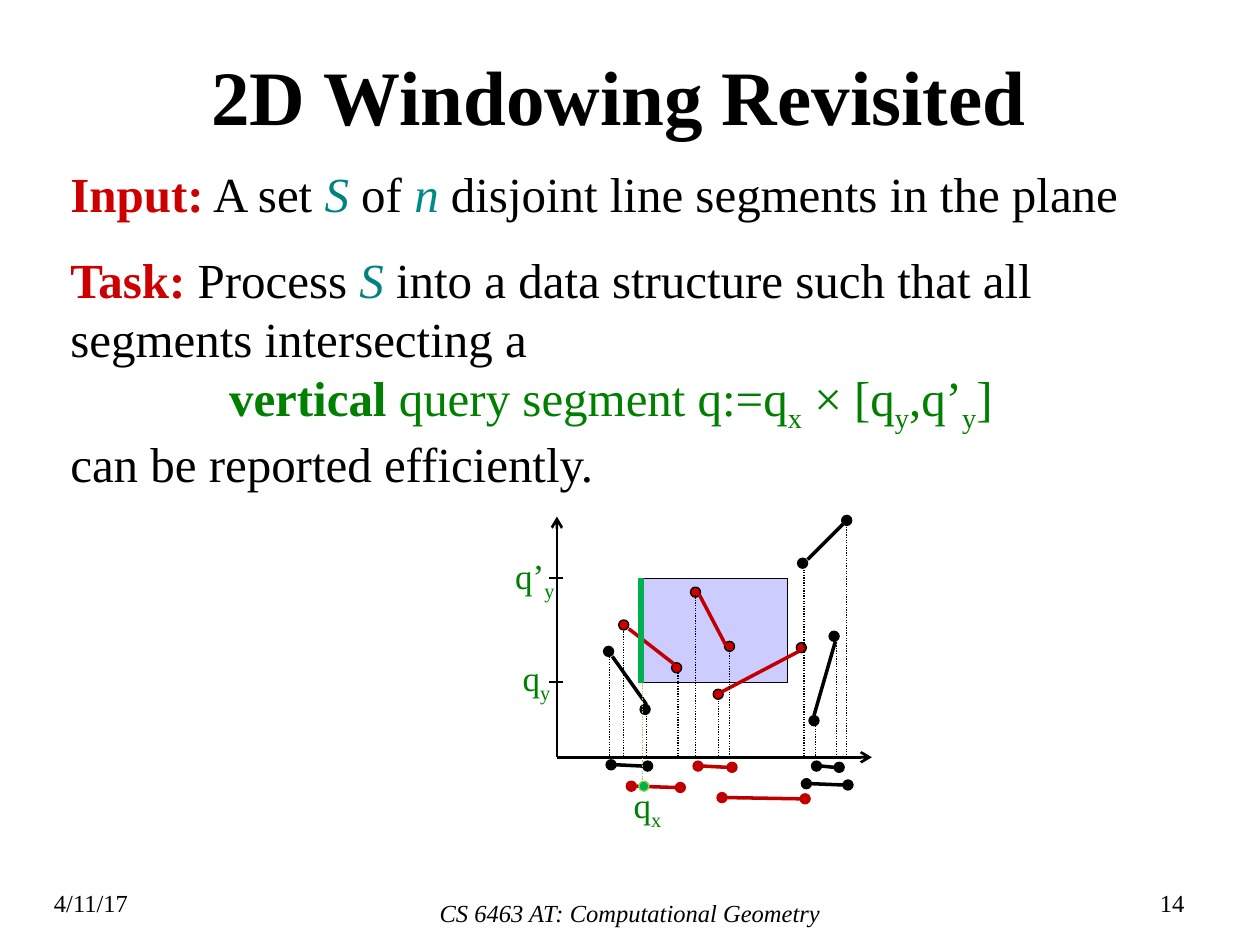
from lxml import etree
from pptx import Presentation
from pptx.dml.color import RGBColor
from pptx.enum.dml import MSO_LINE
from pptx.enum.shapes import MSO_CONNECTOR, MSO_SHAPE
from pptx.enum.text import MSO_ANCHOR, MSO_AUTO_SIZE, PP_ALIGN
from pptx.oxml.ns import qn
from pptx.util import Cm, Pt

STRAIGHT = MSO_CONNECTOR.STRAIGHT
RECTANGLE, OVAL = MSO_SHAPE.RECTANGLE, MSO_SHAPE.OVAL
DOTTED = MSO_LINE.ROUND_DOT
MIDDLE = MSO_ANCHOR.MIDDLE
FIT = MSO_AUTO_SIZE.SHAPE_TO_FIT_TEXT
LEFT, CENTER, RIGHT = PP_ALIGN.LEFT, PP_ALIGN.CENTER, PP_ALIGN.RIGHT

BLACK = RGBColor(0x00, 0x00, 0x00)
RED = RGBColor(0xCC, 0x00, 0x00)
DARK_RED = RGBColor(0xC0, 0x00, 0x00)
TEAL = RGBColor(0x00, 0x83, 0x80)
TEAL_N = RGBColor(0x00, 0x8A, 0x87)
GREEN = RGBColor(0x00, 0x80, 0x00)
QUERY_GREEN = RGBColor(0x00, 0xB0, 0x50)
LIME = RGBColor(0x92, 0xD0, 0x50)
LAVENDER = RGBColor(0xCC, 0xCC, 0xFF)

AXIS_X, AXIS_Y = 4.42, 6.01
DROP_END = 6

SEGMENTS = [
    (BLACK, BLACK, (4.83, 5.17), (5.12, 5.63), (4.86, 5.21), (5.13, 5.59)),
    (BLACK, BLACK, (6.72, 4.13), (6.37, 4.47), (6.69, 4.16), (6.41, 4.44)),
    (BLACK, BLACK, (6.62, 5.05), (6.46, 5.72), (6.63, 5.09), (6.46, 5.68)),
    (RED, DARK_RED, (5.79, 5.13), (5.52, 4.7), (5.76, 5.12), (5.55, 4.72)),
    (RED, DARK_RED, (5.37, 5.3), (4.95, 4.96), (5.35, 5.27), (4.99, 4.99)),
    (RED, DARK_RED, (5.7, 5.51), (6.36, 5.14), (5.73, 5.49), (6.34, 5.17)),
]
DROPS = [
    (4.84, 5.21), (5.13, 5.6), (5.38, 5.34), (5.7, 5.56), (4.95, 4.99), (5.52, 4.72),
    (5.79, 5.12), (6.38, 4.5), (6.47, 5.7), (6.64, 5.04), (6.72, 4.18),
]
INTERVALS = [
    (BLACK, 4.85, 5.14, 6.07),
    (DARK_RED, 5.01, 5.4, 6.24),
    (BLACK, 6.48, 6.66, 6.08),
    (DARK_RED, 5.54, 5.81, 6.08),
    (DARK_RED, 5.73, 6.39, 6.33),
    (BLACK, 6.4, 6.73, 6.22),
]


def inch(value):
    return Cm(value * 2.54)


def add_run(p, text, size=28, color=BLACK, bold=False, italic=False, sub=False):
    r = p.add_run()
    r.text = text
    r.font.name = "Times New Roman"
    r.font.size = Pt(size)
    r.font.color.rgb = color
    r.font.bold = bold
    r.font.italic = italic
    if sub:
        r.font._element.set("baseline", "-25000")


class Canvas:
    dot_size = 0.08
    outline = 0.75

    def __init__(self, s):
        self.s = s

    def text(self, x, y, w, h, paragraphs, align=LEFT, wrap=False, anchor=None, spacing=None, indents=()):
        tf = self.s.shapes.add_textbox(inch(x), inch(y), inch(w), inch(h)).text_frame
        tf.word_wrap = wrap
        if anchor is None:
            tf.auto_size = FIT
        else:
            tf.vertical_anchor = anchor
        for i, runs in enumerate(paragraphs):
            p = tf.add_paragraph() if i else tf.paragraphs[0]
            p.alignment = align
            p.line_spacing = spacing
            if i < len(indents):
                p._p.get_or_add_pPr().set("marL", str(inch(indents[i])))
            for text, style in runs:
                add_run(p, text, **style)

    def shape(self, kind, x, y, w, h, fill, line):
        sp = self.s.shapes.add_shape(kind, inch(x), inch(y), inch(w), inch(h))
        sp.shadow.inherit = False
        sp.fill.solid()
        sp.fill.fore_color.rgb = fill
        sp.line.color.rgb = line
        sp.line.width = Pt(self.outline)

    def dot(self, center, fill, line):
        d = self.dot_size
        self.shape(OVAL, center[0] - d / 2, center[1] - d / 2, d, d, fill, line)

    def line(self, start, end, color=BLACK, width=2, dash=None, arrow=False):
        c = self.s.shapes.add_connector(STRAIGHT, *(inch(v) for v in (*start, *end)))
        c.line.color.rgb = color
        c.line.width = Pt(width)
        if dash is not None:
            c.line.dash_style = dash
        if arrow:
            etree.SubElement(c.line._get_or_add_ln(), qn("a:tailEnd"), type="arrow")
        etree.SubElement(c._element.spPr, qn("a:effectLst"))


def add_wording(canvas):
    small = {"size": 14}
    red = {"color": RED, "bold": True}
    green = {"color": GREEN}
    sub = {"color": GREEN, "sub": True}
    set_name = ("S", {"color": TEAL, "italic": True})

    canvas.text(9.07, 7, 0.43, 0.33, [[("14", small)]], align=RIGHT)
    canvas.text(0.33, 7, 0.79, 0.34, [[("4/11/17", small)]])
    canvas.text(3.2, 7.08, 3.6, 0.34,
                [[("CS 6463 AT: Computational Geometry", {"size": 14, "italic": True})]],
                align=CENTER, wrap=True)
    canvas.text(1.58, 0.17, 8.25, 1.25, [[("2D Windowing Revisited", {"size": 44, "bold": True})]],
                wrap=True, anchor=MIDDLE, spacing=0.9)
    canvas.text(0.46, 1.25, 8.8, 0.57, [[
        ("Input:", red), (" A set ", {}), set_name, (" of ", {}),
        ("n", {"color": TEAL_N, "italic": True}),
        (" disjoint line segments in the plane", {}),
    ]], wrap=True)
    canvas.text(0.46, 1.93, 8.71, 1.99, [
        [("Task:", red), (" Process ", {}), set_name,
         (" into a data structure such that all segments intersecting a", {})],
        [("vertical", {"color": GREEN, "bold": True}), (" query segment q:=q", green), ("x", sub),
         (" × [q", green), ("y", sub), (",q’", green), ("y", sub), ("]", green)],
        [("can be reported efficiently.", {})],
    ], wrap=True, indents=(0, 1.26))


def add_diagram(canvas):
    origin = (AXIS_X, AXIS_Y)
    for tip in ((AXIS_X, 4.1), (6.92, AXIS_Y)):
        canvas.line(origin, tip, width=1.5, arrow=True)
    canvas.shape(RECTANGLE, 5.08, 4.59, 1.17, 0.83, LAVENDER, BLACK)
    for fill, color, first, second, start, end in SEGMENTS:
        canvas.dot(first, fill, BLACK)
        canvas.dot(second, fill, BLACK)
        canvas.line(start, end, color)
    canvas.line((5.09, 4.59), (5.09, 5.42), QUERY_GREEN, 3.25)
    for x, top in DROPS:
        canvas.line((x, top), (x, DROP_END), width=0.75, dash=DOTTED)
    for color, left, right, y in INTERVALS:
        first, second = (left, y), (right, y + 0.01)
        canvas.dot(first, color, color)
        canvas.dot(second, color, color)
        canvas.line((left + 0.04, y), (right - 0.04, y + 0.01), color)
    canvas.line((5.1, 5.42), (5.1, 6.26), LIME, 0.75, DOTTED)
    canvas.dot((5.11, 6.24), QUERY_GREEN, LIME)
    for y in (5.41, 4.59):
        canvas.line((4.47, y), (4.36, y), width=1)
    for x, y, w, name, index in ((4.93, 6.17, 0.44, "q", "x"),
                                 (4.05, 5.16, 0.44, "q", "y"),
                                 (3.99, 4.35, 0.53, "q’", "y")):
        style = {"size": 20, "color": GREEN}
        canvas.text(x, y, w, 0.44, [[(name, style), (index, {**style, "sub": True})]])


def main():
    prs = Presentation()
    prs.slide_width, prs.slide_height = Cm(25.4), Cm(19.05)
    canvas = Canvas(prs.slides.add_slide(prs.slide_layouts[6]))
    add_wording(canvas)
    add_diagram(canvas)
    prs.save("out.pptx")


if __name__ == "__main__":
    main()
